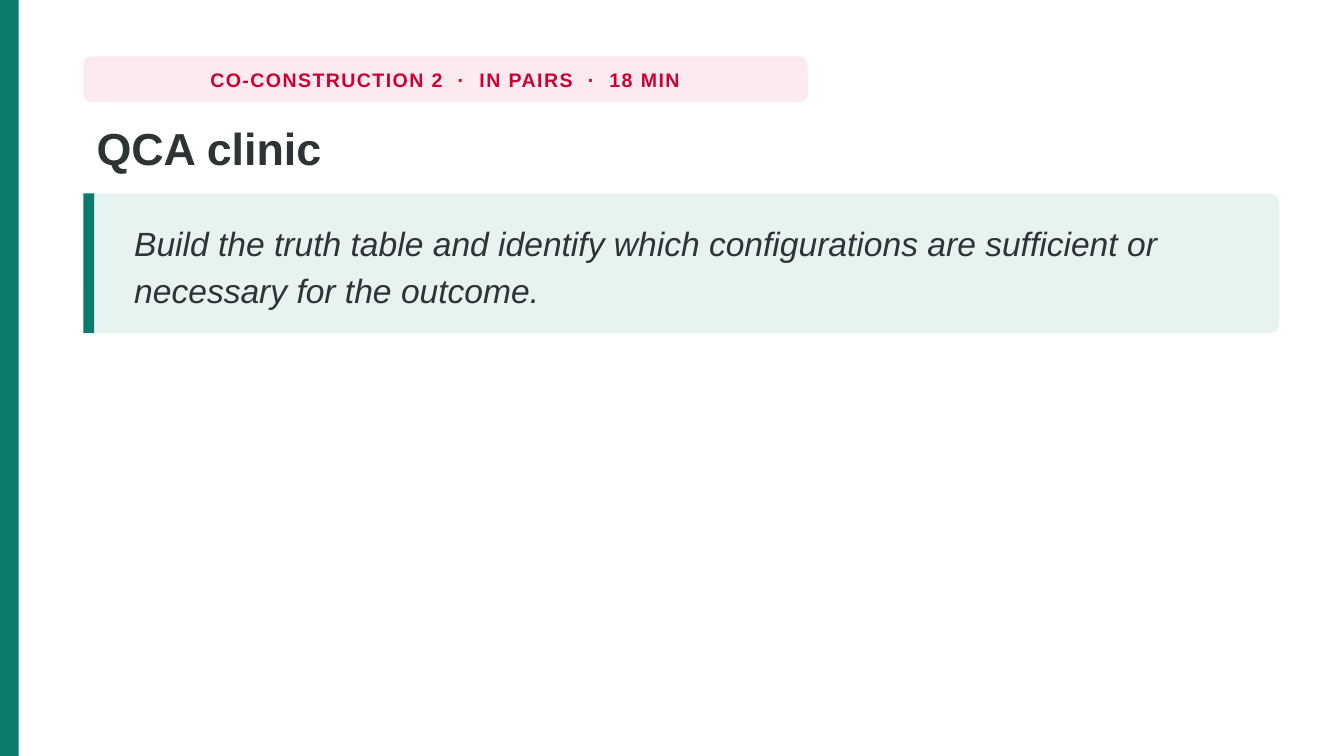
from pptx import Presentation
from pptx.dml.color import RGBColor
from pptx.enum.shapes import MSO_SHAPE
from pptx.enum.text import MSO_ANCHOR, PP_ALIGN
from pptx.util import Inches, Pt

GREEN = RGBColor(0x0B, 0x7B, 0x6B)
MINT = RGBColor(0xE6, 0xF3, 0xF0)
PINK = RGBColor(0xFD, 0xEA, 0xEF)
RED = RGBColor(0xCC, 0x00, 0x33)
INK = RGBColor(0x2D, 0x34, 0x36)
WHITE = RGBColor(0xFF, 0xFF, 0xFF)
SLIDE_WIDTH = 10
SLIDE_HEIGHT = SLIDE_WIDTH * 9 / 16
LEFT, WIDTH = 0.62, 8.9
CARD_TOP, CARD_HEIGHT = 1.44, 1.04


def add_panel(kind, x, y, w, h, color, radius=None):
    sp = s.shapes.add_shape(kind, Inches(x), Inches(y), Inches(w), Inches(h))
    sp.shadow.inherit = False
    sp.fill.solid()
    sp.fill.fore_color.rgb = color
    sp.line.fill.background()
    if radius is not None:
        sp.adjustments[0] = radius / h


def add_text(x, y, w, h, text, size, color, anchor=MSO_ANCHOR.MIDDLE, wrap=True):
    tf = s.shapes.add_textbox(Inches(x), Inches(y), Inches(w), Inches(h)).text_frame
    tf.word_wrap = wrap
    tf.vertical_anchor = anchor
    p = tf.paragraphs[0]
    r = p.add_run()
    r.text = text
    r.font.name = "Arial"
    r.font.size = Pt(size)
    r.font.color.rgb = color
    return p, r


prs = Presentation()
prs.slide_width = Inches(SLIDE_WIDTH)
prs.slide_height = Inches(SLIDE_HEIGHT)
s = prs.slides.add_slide(prs.slide_layouts[6])
s.background.fill.solid()
s.background.fill.fore_color.rgb = WHITE

add_panel(MSO_SHAPE.RECTANGLE, 0, 0, 0.14, SLIDE_HEIGHT, GREEN)

badge = (LEFT, 0.42, 5.39, 0.34)
add_panel(MSO_SHAPE.ROUNDED_RECTANGLE, *badge, PINK, 0.06)
p, r = add_text(*badge, "CO-CONSTRUCTION 2  ·  IN PAIRS  ·  18 MIN", 10.5, RED, wrap=False)
p.alignment = PP_ALIGN.CENTER
r.font.bold = True
r._r.get_or_add_rPr().set("spc", "80")

p, r = add_text(LEFT, 0.84, WIDTH, 0.56, "QCA clinic", 24, INK, MSO_ANCHOR.TOP)
p.line_spacing = 1.02
r.font.bold = True

add_panel(MSO_SHAPE.ROUNDED_RECTANGLE, LEFT, CARD_TOP, WIDTH, CARD_HEIGHT, MINT, 0.07)
add_panel(MSO_SHAPE.RECTANGLE, LEFT, CARD_TOP, 0.08, CARD_HEIGHT, GREEN)
p, r = add_text(
    0.9, CARD_TOP + 0.05, 8.35, CARD_HEIGHT - 0.1,
    "Build the truth table and identify which configurations are sufficient or necessary for the outcome.",
    18, INK,
)
p.line_spacing = 1.16
r.font.italic = True

prs.save("out.pptx")
